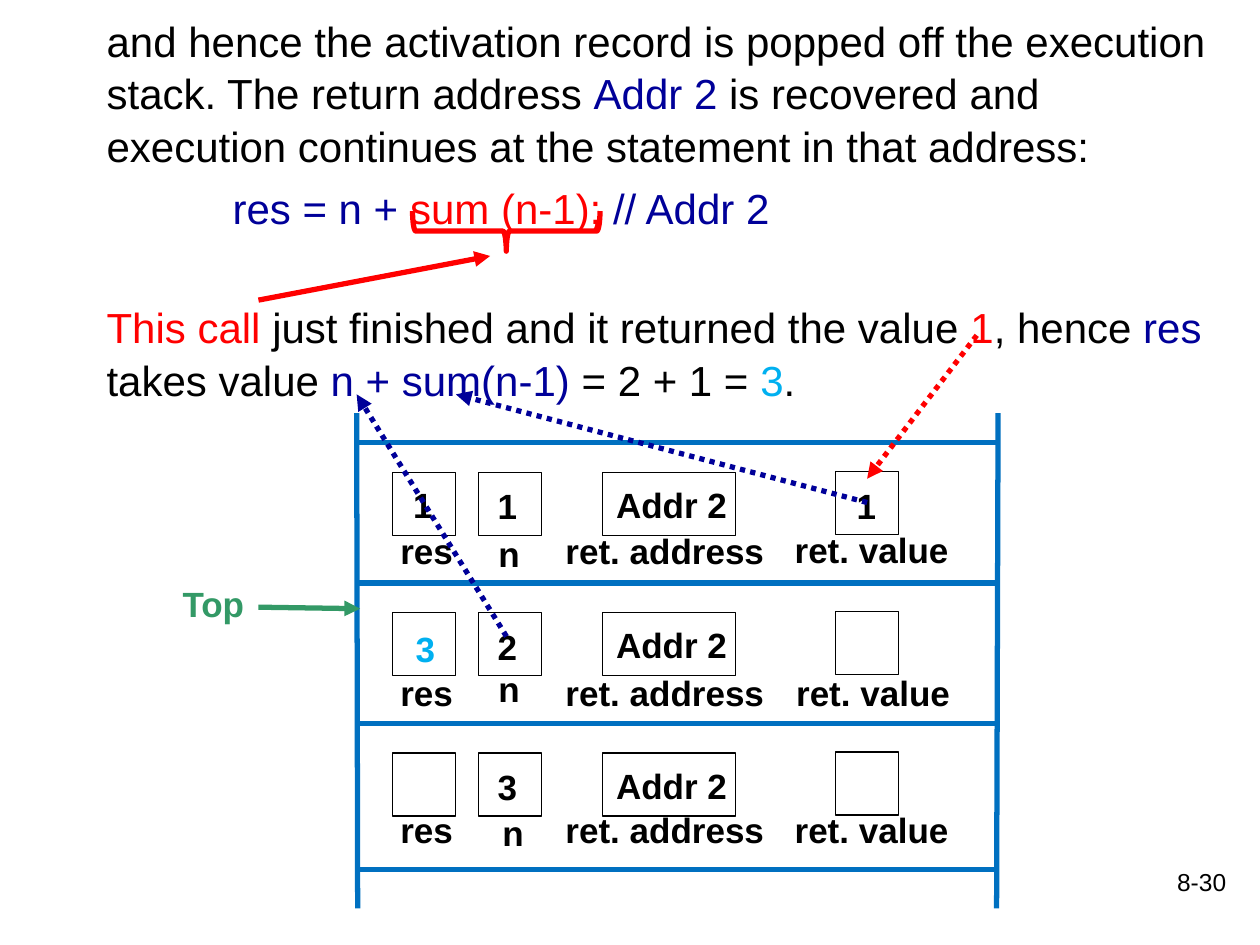
import pptx
import pptx.util
import pptx.dml.color
import pptx.enum.dml
import pptx.enum.shapes
import pptx.enum.text
import pptx.oxml
import pptx.oxml.ns
from dataclasses import dataclass
from pptx.util import Cm


@dataclass(frozen=True)
class Theme:
    font: str = "Arial"
    black: str = "000000"
    navy: str = "000099"
    red: str = "FF0000"
    sky: str = "00B0F0"
    blue: str = "0070C0"
    green: str = "339966"
    body: int = 24
    label: int = 20
    page: int = 14
    thick: float = 3
    thin: float = 0.75


T = Theme()
PITCH = 2.83
ROWS = 3

# Body paragraphs: space before, left indent (cm), coloured runs
BODY = [
    (4.8, 0, [
        ("and hence the activation record is popped off the execution "
         "stack. The return address ", T.black),
        ("Addr 2", T.navy),
        (" is recovered and execution continues at the statement in "
         "that address:", T.black)]),
    (4.8, 2.54, [
        ("res = n + ", T.navy), ("sum (n-1); ", T.red),
        ("// Addr 2", T.navy)]),
    (38, 0, [
        ("This call ", T.red),
        ("just finished and it returned the value ", T.black),
        ("1", T.red), (", hence ", T.black), ("res", T.navy),
        (" takes value ", T.black), ("n + sum(n-1) ", T.navy),
        ("= 2 + 1 = ", T.black), ("3", T.sky), (".", T.black)]),
]

# Cells of one record: left, width, rise above the row
CELLS = [(7.92, 1.27, 0), (9.65, 1.27, 0), (12.14, 2.69, 0),
         (16.84, 1.27, 0.02)]

# Captions: text, width, (left, top) in each record
NAMES = [
    ("res", 1.57, [(7.82, 10.54), (7.82, 13.41), (7.82, 16.18)]),
    ("n", 0.94, [(9.8, 10.62), (9.8, 13.34), (9.88, 16.23)]),
    ("ret. address", 4.55, [(11.15, 10.54), (11.15, 13.41), (11.15, 16.18)]),
    ("ret. value", 3.63, [(15.77, 10.52), (15.8, 13.41), (15.77, 16.18)]),
]


def rgb(code):
    return pptx.dml.color.RGBColor.from_string(code)


def style(font, size, color, bold=False):
    font.name = T.font
    font.size = pptx.util.Pt(size)
    font.bold = bold
    font.color.rgb = rgb(color)


def stroke(line, color, width):
    line.color.rgb = rgb(color)
    line.width = pptx.util.Pt(width)


def frame(slide, left, top, wide, high, wrap):
    box = slide.shapes.add_textbox(Cm(left), Cm(top), Cm(wide), Cm(high))
    box.text_frame.word_wrap = wrap
    return box.text_frame


def label(slide, text, left, top, wide, color=T.black):
    para = frame(slide, left, top, wide, 1.12, False).paragraphs[0]
    para.text = text
    style(para.font, T.label, color, True)


def shape(slide, kind, left, top, wide, high, color, width):
    item = slide.shapes.add_shape(
        kind, Cm(left), Cm(top), Cm(wide), Cm(high))
    item.shadow.inherit = False
    item.fill.background()
    stroke(item.line, color, width)
    return item


def line(slide, start, end, color, arrow=False, dots=False):
    link = slide.shapes.add_connector(
        pptx.enum.shapes.MSO_CONNECTOR.STRAIGHT,
        *(Cm(v) for v in (*start, *end)))
    stroke(link.line, color, T.thick)
    if dots:
        link.line.dash_style = pptx.enum.dml.MSO_LINE.ROUND_DOT
    if arrow:
        tip = pptx.oxml.ns.qn("a:tailEnd")
        link.line._get_or_add_ln().append(
            pptx.oxml.parse_xml(
                '<a:tailEnd %s type="triangle"/>' % pptx.oxml.ns.nsdecls("a"))
            if tip else None)
    link._element.spPr.append(pptx.oxml.parse_xml(
        "<a:effectLst %s/>" % pptx.oxml.ns.nsdecls("a")))


def prose(slide):
    text = frame(slide, 1.9, 0.13, 23.06, 10, True)
    for i, (space, indent, runs) in enumerate(BODY):
        para = text.add_paragraph() if i else text.paragraphs[0]
        para.space_before = pptx.util.Pt(space)
        para.line_spacing = 1.05
        para._p.get_or_add_pPr().set("marL", str(Cm(indent)))
        for words, color in runs:
            run = para.add_run()
            run.text = words
            style(run.font, T.body, color)


def stack(slide):
    """Draw the rails, the shelves and the cells of each record."""
    line(slide, (7.19, 8.33), (7.21, 18.31), T.blue)
    line(slide, (20.09, 18.31), (20.12, 8.33), T.blue)
    for y in [8.92 + PITCH * i for i in range(ROWS)] + [17.53]:
        line(slide, (7.21, y), (20.12, y), T.blue)
    rect = pptx.enum.shapes.MSO_SHAPE.RECTANGLE
    for i, n in enumerate("123"):
        top = 9.52 + PITCH * i
        for left, wide, rise in CELLS:
            shape(slide, rect, left, top - rise, wide, 1.27, T.black, T.thin)
        label(slide, n, 9.78, top + 0.13, 0.91)
        label(slide, "Addr 2", 12.17, top + 0.1, 2.77)
    for name, wide, spots in NAMES:
        for left, top in spots:
            label(slide, name, left, top, wide)
    label(slide, "1", 8.08, 9.63, 0.91)
    label(slide, "1", 17.02, 9.65, 0.91)
    label(slide, "3", 8.13, 12.52, 0.91, T.sky)


def marks(slide):
    """Draw the brace and the arrows that tie text to the stack."""
    label(slide, "Top", 3.43, 11.61, 1.78, T.green)
    line(slide, (5.21, 12.24), (7.26, 12.27), T.green, arrow=True)
    line(slide, (5.21, 6.05), (9.88, 5.16), T.red, arrow=True)
    brace = shape(slide, pptx.enum.shapes.MSO_SHAPE.RIGHT_BRACE,
                  9.8, 2.77, 0.81, 3.78, T.red, T.thick)
    brace.rotation = 90
    for start, end, color in [
            ((19.69, 6.76), (17.48, 9.65), T.red),
            ((10.21, 12.83), (7.19, 7.95), T.navy),
            ((17.48, 10.13), (9.19, 7.95), T.navy)]:
        line(slide, start, end, color, arrow=True, dots=True)


def page(slide):
    para = frame(slide, 19.69, 17.35, 5.28, 1.27, True).paragraphs[0]
    para.text = "8-30"
    para.alignment = pptx.enum.text.PP_ALIGN.RIGHT
    style(para.font, T.page, T.black)


def main():
    deck = pptx.Presentation()
    deck.slide_width, deck.slide_height = Cm(25.4), Cm(19.05)
    slide = deck.slides.add_slide(deck.slide_layouts[6])
    page(slide)
    prose(slide)
    stack(slide)
    marks(slide)
    deck.save("out.pptx")


if __name__ == "__main__":
    main()
